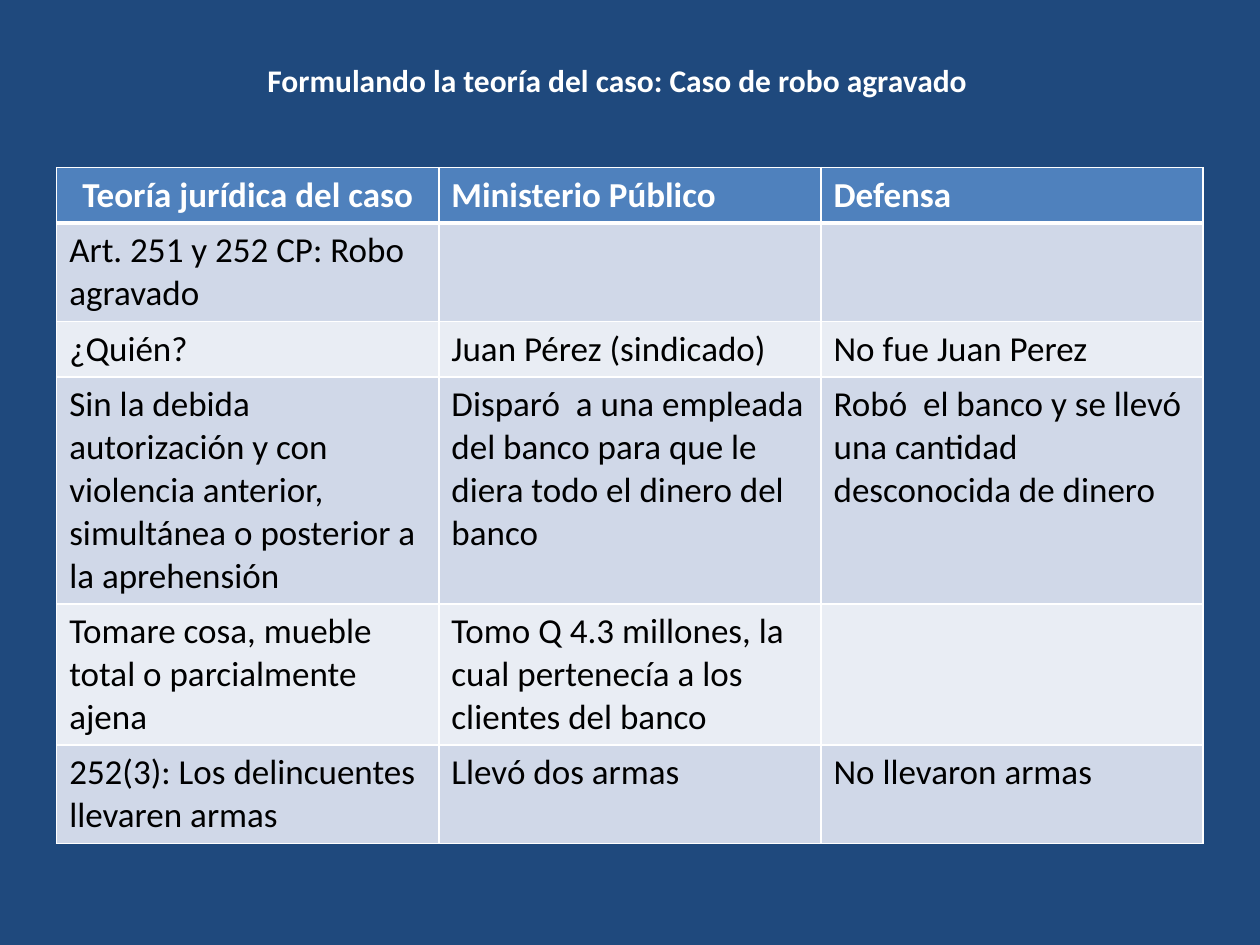
from lxml import etree
from pptx import Presentation
from pptx.dml.color import RGBColor
from pptx.enum.text import MSO_ANCHOR, PP_ALIGN
from pptx.oxml.ns import qn
from pptx.util import Inches, Pt

CENTER, LEFT = PP_ALIGN.CENTER, PP_ALIGN.LEFT
MIDDLE = MSO_ANCHOR.MIDDLE
WIDTH, HEIGHT = 10, 7.5
TITLE_ONLY = 5

COLORS = {
    "background": "1F497D",
    "header": "4F81BD",
    "odd": "D0D8E8",
    "even": "E9EDF4",
    "light": "FFFFFF",
    "dark": "000000",
}

TITLE = "Formulando la teoría del caso: Caso de robo agravado"
CASE_THEORY = [
    ("Teoría jurídica del caso", "Ministerio Público", "Defensa"),
    ("Art. 251 y 252 CP: Robo agravado", "", ""),
    ("¿Quién?", "Juan Pérez (sindicado)", "No fue Juan Perez"),
    (
        "Sin la debida  autorización y con violencia anterior, "
        "simultánea o posterior a la aprehensión",
        "Disparó  a una empleada del banco para que le diera todo el dinero del banco",
        "Robó  el banco y se llevó  una cantidad desconocida de dinero",
    ),
    (
        "Tomare cosa, mueble total o parcialmente ajena",
        "Tomo Q 4.3 millones, la cual pertenecía a los clientes del banco",
        "",
    ),
    ("252(3): Los delincuentes llevaren armas", "Llevó dos armas", "No llevaron armas"),
]
ROW_HEIGHTS = [0.43, 0.77, 0.43, 1.77, 1.1, 0.77]


class SlideBuilder:
    font = "Calibri"
    title_size = 18
    table_size = 20

    def __init__(self, deck):
        self.slide = deck.slides.add_slide(deck.slide_layouts[TITLE_ONLY])
        self.width, self.height = deck.slide_width, deck.slide_height

    def box(self, left, top, width, height):
        return (
            round(left * self.width),
            round(top * self.height),
            round(width * self.width),
            round(height * self.height),
        )

    def background(self, color):
        fill = self.slide.background.fill
        fill.solid()
        fill.fore_color.rgb = RGBColor.from_string(COLORS[color])

    def set_text(self, frame, text, size, color, bold, align):
        frame.text = text
        paragraph = frame.paragraphs[0]
        paragraph.alignment = align
        for font in [paragraph.font] + [run.font for run in paragraph.runs]:
            font.name = self.font
            font.size = Pt(size)
            font.bold = bold
            font.color.rgb = RGBColor.from_string(COLORS[color])

    def title(self, text, box):
        heading = self.slide.shapes.title
        heading.left, heading.top, heading.width, heading.height = box
        frame = heading.text_frame
        frame.word_wrap = True
        frame.vertical_anchor = MIDDLE
        self.set_text(frame, text, self.title_size, "light", True, CENTER)

    def borders(self, cell, bottom):
        properties = cell._tc.get_or_add_tcPr()
        for side, points in (("L", 1), ("R", 1), ("T", 1), ("B", bottom)):
            line = etree.SubElement(properties, qn(f"a:ln{side}"), w=str(Pt(points)))
            solid = etree.SubElement(line, qn("a:solidFill"))
            etree.SubElement(solid, qn("a:srgbClr"), val=COLORS["light"])

    def cell(self, cell, text, band, align):
        is_header = band == "header"
        self.borders(cell, 3 if is_header else 1)
        cell.fill.solid()
        cell.fill.fore_color.rgb = RGBColor.from_string(COLORS[band])
        color = "light" if is_header else "dark"
        self.set_text(cell.text_frame, text, self.table_size, color, is_header, align)

    def table(self, rows, row_heights, box):
        grid = self.slide.shapes.add_table(len(rows), len(rows[0]), *box).table
        for row, height in zip(grid.rows, row_heights):
            row.height = Inches(height)
        for r, texts in enumerate(rows):
            band = "header" if r == 0 else ("even", "odd")[r % 2]
            for c, text in enumerate(texts):
                align = CENTER if r == c == 0 else LEFT
                self.cell(grid.cell(r, c), text, band, align)


def main():
    deck = Presentation()
    deck.slide_width, deck.slide_height = Inches(WIDTH), Inches(HEIGHT)
    builder = SlideBuilder(deck)
    builder.background("background")
    builder.title(TITLE, builder.box(0.125, 0.06, 0.73, 0.05))
    table_height = sum(ROW_HEIGHTS) / HEIGHT
    table_box = builder.box(0.045, 1.33 / HEIGHT, 0.91, table_height)
    builder.table(CASE_THEORY, ROW_HEIGHTS, table_box)
    deck.save("out.pptx")


if __name__ == "__main__":
    main()
